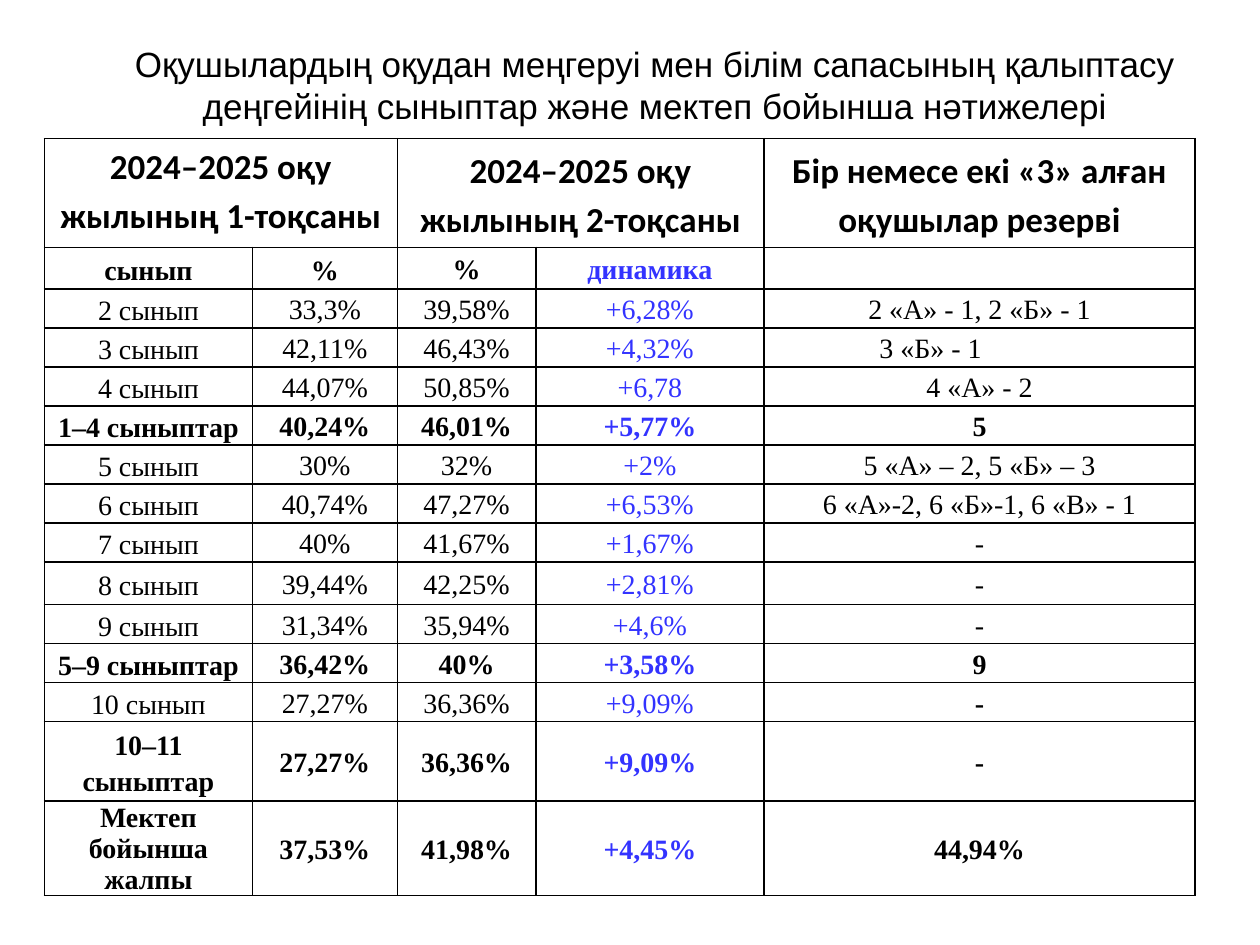
import pptx
import pptx.dml.color
import pptx.enum.text
import pptx.oxml
import pptx.oxml.ns
import pptx.util

Pt = pptx.util.Pt
RGBColor = pptx.dml.color.RGBColor
PP_ALIGN = pptx.enum.text.PP_ALIGN
MSO_ANCHOR = pptx.enum.text.MSO_ANCHOR

COLORS = {"text": "000000", "dynamics": "3333FF", "border": "000000"}

HEADERS = {
    0: "2024–2025 оқу жылының 1-тоқсаны",
    2: "2024–2025 оқу жылының 2-тоқсаны",
    4: "Бір немесе екі «3» алған оқушылар резерві",
}
ROWS = [
    ["сынып", "%", "%", "динамика", ""],
    ["2 сынып", "33,3%", "39,58%", "+6,28%", "2 «А» - 1, 2 «Б» - 1"],
    ["3 сынып", "42,11%", "46,43%", "+4,32%", "3 «Б» - 1"],
    ["4 сынып", "44,07%", "50,85%", "+6,78", "4 «А» - 2"],
    ["1–4 сыныптар", "40,24%", "46,01%", "+5,77%", "5"],
    ["5 сынып", "30%", "32%", "+2%", "5 «А» – 2, 5 «Б» – 3"],
    ["6 сынып", "40,74%", "47,27%", "+6,53%", "6 «А»-2, 6 «Б»-1, 6 «В» - 1"],
    ["7 сынып", "40%", "41,67%", "+1,67%", "-"],
    ["8 сынып", "39,44%", "42,25%", "+2,81%", "-"],
    ["9 сынып", "31,34%", "35,94%", "+4,6%", "-"],
    ["5–9 сыныптар", "36,42%", "40%", "+3,58%", "9"],
    ["10 сынып", "27,27%", "36,36%", "+9,09%", "-"],
    ["10–11 сыныптар", "27,27%", "36,36%", "+9,09%", "-"],
    ["Мектеп бойынша жалпы", "37,53%", "41,98%", "+4,45%", "44,94%"],
]
BOLD_ROWS = {1, 5, 11, 13, 14}
TOTAL_ROW = len(ROWS)
COLUMN_WIDTHS = [118.8, 82.8, 79.2, 130.3, 246.5]
ROW_HEIGHT = 22.3
SPECIAL_HEIGHTS = {0: 58.3, 1: 23.8, 9: 24.5, 13: 45.4, 14: 54}


def write_paragraph(paragraph, text, font_name, size, color="text", bold=False):
    paragraph.text = text
    paragraph.alignment = PP_ALIGN.CENTER
    paragraph.font.name = font_name
    paragraph.font.size = Pt(size)
    paragraph.font.bold = bold
    paragraph.font.color.rgb = RGBColor.from_string(COLORS[color])


def style_cell(cell, side_margin, top_margin, bottom_margin):
    """Set margins, black borders on all sides and no fill."""
    cell.margin_left = cell.margin_right = Pt(side_margin)
    cell.margin_top, cell.margin_bottom = Pt(top_margin), Pt(bottom_margin)
    properties = cell._tc.get_or_add_tcPr()
    for side in ("lnL", "lnR", "lnT", "lnB"):
        properties.append(pptx.oxml.parse_xml(
            f'<a:{side} {pptx.oxml.ns.nsdecls("a")} w="{Pt(1)}"><a:solidFill>'
            f'<a:srgbClr val="{COLORS["border"]}"/></a:solidFill></a:{side}>'))
    cell.fill.background()


presentation = pptx.Presentation()
presentation.slide_width, presentation.slide_height = Pt(720), Pt(540)
slide = presentation.slides.add_slide(presentation.slide_layouts[6])

table_frame = slide.shapes.add_table(
    len(ROWS) + 1, len(COLUMN_WIDTHS), Pt(25.4), Pt(79.2), Pt(657.6), Pt(436.3))
table = table_frame.table
table.first_row = table.horz_banding = False
for column, width in zip(table.columns, COLUMN_WIDTHS):
    column.width = Pt(width)
for row_index, row in enumerate(table.rows):
    row.height = Pt(SPECIAL_HEIGHTS.get(row_index, ROW_HEIGHT))

# Header row
for column_index in range(len(COLUMN_WIDTHS)):
    cell = table.cell(0, column_index)
    if column_index < 2:
        style_cell(cell, 4.3, 0.6, 0)
    else:
        style_cell(cell, 5.8, 2.9, 2.9)
    if column_index in HEADERS:
        paragraph = cell.text_frame.paragraphs[0]
        write_paragraph(paragraph, HEADERS[column_index], "Calibri", 20, bold=True)
        paragraph.line_spacing = 1.15
        paragraph.space_after = Pt(8)
for first_column in (0, 2):
    table.cell(0, first_column).merge(table.cell(0, first_column + 1))

# Subheader and class rows
for row_index, values in enumerate(ROWS, start=1):
    for column_index, value in enumerate(values):
        cell = table.cell(row_index, column_index)
        style_cell(cell, 4.3 if column_index == 0 or row_index < 3 else 0.7, 0.6, 0)
        is_total_label = row_index == TOTAL_ROW and column_index == 0
        cell.vertical_anchor = MSO_ANCHOR.TOP if is_total_label else MSO_ANCHOR.MIDDLE
        bold = row_index in BOLD_ROWS or (row_index == 12 and column_index == 4)
        paragraph = cell.text_frame.paragraphs[0]
        write_paragraph(paragraph, value, "Times New Roman", 16,
                        "dynamics" if column_index == 3 else "text", bold)
        if is_total_label:
            paragraph.line_spacing = 1.0
        else:
            wide = column_index == 0 or (row_index == 1 and column_index == 1)
            paragraph.line_spacing = 1.15 if wide else 1.07
        tight = column_index in (2, 3) or (column_index == 0 and not bold)
        paragraph.space_after = Pt(0 if tight and row_index > 1 else 8)

# The reserve of class 3 sits left of the column centre
table.cell(3, 4).margin_right = Pt(56.7)

title = slide.shapes.add_textbox(Pt(48.2), Pt(20.9), Pt(652.3), Pt(79.9))
title.text_frame.word_wrap = True
write_paragraph(
    title.text_frame.paragraphs[0],
    "Оқушылардың оқудан меңгеруі мен білім сапасының қалыптасу "
    "деңгейінің сыныптар және мектеп бойынша нәтижелері",
    "Arial", 20)

presentation.save("out.pptx")
